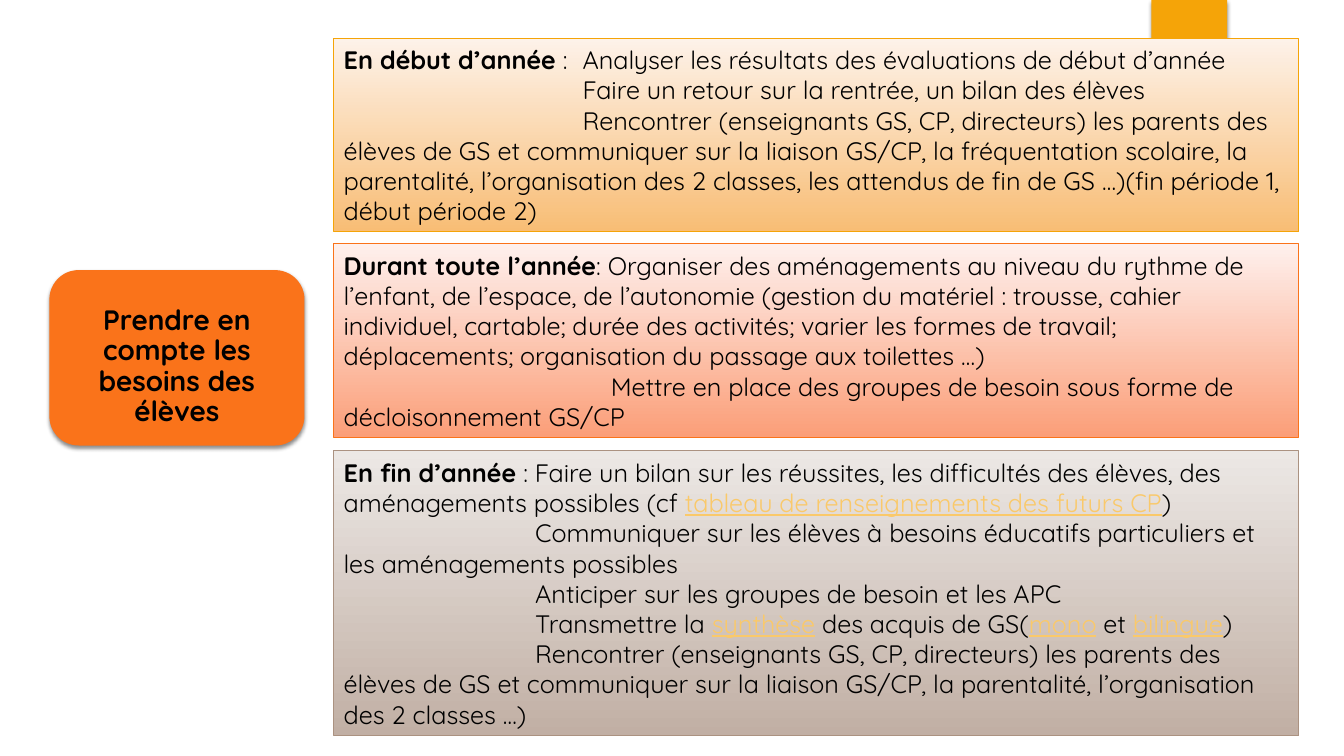
from dataclasses import dataclass

from lxml import etree
from pptx import Presentation
from pptx.dml.color import RGBColor
from pptx.enum import shapes, text
from pptx.oxml.ns import qn
from pptx.util import Inches, Pt


@dataclass(frozen=True)
class Theme:
    font: str = "Quicksand"
    title_size: int = 20
    body_size: int = 18
    ink: str = "000000"
    link: str = "FAC96A"
    amber: str = "F5A408"
    orange: str = "FA731A"
    taupe: str = "AB9281"


THEME = Theme()
BOX_LEFT, BOX_WIDTH = 3.31, 9.57
BOLD, PLAIN, LINK = "bold", "plain", "link"

# Each period: top, height, gradient colours, line colour, indent of later paragraphs, paragraphs
PERIODS = [
    (0.38, 1.92, ("FDF2E9", "F8BD75"), THEME.amber, 2.37, [
        [("En début d’année ", BOLD),
         (":\tAnalyser les résultats des évaluations de début d’année", PLAIN)],
        [("Faire un retour sur la rentrée, un bilan des élèves", PLAIN)],
        [("Rencontrer (enseignants GS, CP, directeurs) les parents des élèves de GS et "
          "communiquer sur la liaison GS/CP, la fréquentation scolaire, la parentalité, "
          "l’organisation des 2 classes, les attendus de fin de GS …)(fin période 1, "
          "début période 2)", PLAIN)],
    ]),
    (2.42, 1.92, ("FEF0ED", "FB9E78"), THEME.orange, 2.65, [
        [("Durant toute l’année", BOLD),
         (": Organiser des aménagements au niveau du rythme de l’enfant, de l’espace, de "
          "l’autonomie (gestion du matériel : trousse, cahier individuel, cartable; durée "
          "des activités; varier les formes de travail; déplacements; organisation du "
          "passage aux toilettes …)", PLAIN)],
        [("Mettre en place des groupes de besoin sous forme de décloisonnement GS/CP", PLAIN)],
    ]),
    (4.47, 2.83, ("ECE8E5", "C1AFA4"), THEME.taupe, 1.9, [
        [("En fin d’année ", BOLD),
         (": Faire un bilan sur les réussites, les difficultés des élèves, des "
          "aménagements possibles (cf ", PLAIN),
         ("tableau de renseignements des futurs CP", LINK), (")", PLAIN)],
        [("Communiquer sur les élèves à besoins éducatifs particuliers et les "
          "aménagements possibles", PLAIN)],
        [("Anticiper sur les groupes de besoin et les APC", PLAIN)],
        [("Transmettre la ", PLAIN), ("synthèse", LINK), (" des acquis de GS(", PLAIN),
         ("mono", LINK), (" et ", PLAIN), ("bilingue", LINK), (")", PLAIN)],
        [("Rencontrer (enseignants GS, CP, directeurs) les parents des élèves de GS et "
          "communiquer sur la liaison GS/CP, la parentalité, l’organisation des 2 "
          "classes …)", PLAIN)],
    ]),
]


def rgb(colour):
    return RGBColor.from_string(colour)


def style_font(font, size, bold=False, colour=THEME.ink):
    font.name = THEME.font
    font.size = Pt(size)
    font.bold = bold
    font.color.rgb = rgb(colour)


def add_drop_shadow(shape):
    shape.shadow.inherit = False
    effects = shape.element.spPr.find(qn("a:effectLst"))
    shadow = etree.SubElement(effects, qn("a:outerShdw"), blurRad=str(Pt(3)),
                              dist=str(Pt(2)), dir="5400000", rotWithShape="0")
    colour = etree.SubElement(shadow, qn("a:srgbClr"), val="000000")
    etree.SubElement(colour, qn("a:alpha"), val="45000")


def add_block(slide, kind, bounds, colour):
    """Add a plain filled shape with a soft shadow."""
    block = slide.shapes.add_shape(kind, *map(Inches, bounds))
    block.fill.solid()
    block.fill.fore_color.rgb = rgb(colour)
    block.line.fill.background()
    add_drop_shadow(block)


def place_title(slide, wording, bounds):
    """Move the title placeholder in front of the other shapes and format it."""
    title = slide.shapes.title
    title.left, title.top, title.width, title.height = map(Inches, bounds)
    frame = title.text_frame
    frame.text = wording
    frame.word_wrap = True
    frame.auto_size = text.MSO_AUTO_SIZE.NONE
    frame.vertical_anchor = text.MSO_ANCHOR.MIDDLE
    frame.margin_left = frame.margin_right = frame.margin_top = Inches(0.16)
    frame.margin_bottom = 0
    paragraph = frame.paragraphs[0]
    paragraph.alignment = text.PP_ALIGN.CENTER
    paragraph.line_spacing = 0.9
    style_font(paragraph.runs[0].font, THEME.title_size, bold=True)
    title.element.getparent().append(title.element)


def indent_paragraph(paragraph, indent, is_first):
    """Start later paragraphs at the indent; give the first one a tab stop there."""
    properties = paragraph._p.get_or_add_pPr()
    if is_first:
        tabs = etree.SubElement(properties, qn("a:tabLst"))
        etree.SubElement(tabs, qn("a:tab"), pos=str(Inches(indent)), algn="l")
    else:
        properties.set("marL", "0")
        properties.set("indent", str(Inches(indent)))


def add_period(slide, top, height, gradient, line_colour, indent, paragraphs):
    box = slide.shapes.add_shape(shapes.MSO_SHAPE.RECTANGLE, Inches(BOX_LEFT), Inches(top),
                                 Inches(BOX_WIDTH), Inches(height))
    box.shadow.inherit = False
    box.fill.gradient()
    box.fill.gradient_angle = 270
    for stop, colour in zip(box.fill.gradient_stops, gradient):
        stop.color.rgb = rgb(colour)
    box.line.color.rgb = rgb(line_colour)
    box.line.width = Pt(0.75)

    frame = box.text_frame
    frame.word_wrap = True
    frame.auto_size = text.MSO_AUTO_SIZE.SHAPE_TO_FIT_TEXT
    for index, pieces in enumerate(paragraphs):
        paragraph = frame.add_paragraph() if index else frame.paragraphs[0]
        paragraph.alignment = text.PP_ALIGN.LEFT
        indent_paragraph(paragraph, indent, is_first=index == 0)
        for wording, kind in pieces:
            run = paragraph.add_run()
            run.text = wording
            colour = THEME.link if kind == LINK else THEME.ink
            style_font(run.font, THEME.body_size, kind == BOLD, colour)
            run.font.underline = kind == LINK


def main():
    presentation = Presentation()
    presentation.slide_width = Inches(13.33)
    presentation.slide_height = Inches(7.5)
    slide = presentation.slides.add_slide(presentation.slide_layouts.get_by_name("Title Only"))

    add_block(slide, shapes.MSO_SHAPE.RECTANGLE, (11.42, 0, 0.75, 1.25), THEME.amber)
    add_block(slide, shapes.MSO_SHAPE.ROUNDED_RECTANGLE, (0.49, 2.68, 2.53, 1.74), THEME.orange)
    for period in PERIODS:
        add_period(slide, *period)
    place_title(slide, "Prendre en compte les besoins des élèves", (0.76, 2.87, 1.99, 1.38))

    presentation.save("out.pptx")


if __name__ == "__main__":
    main()
